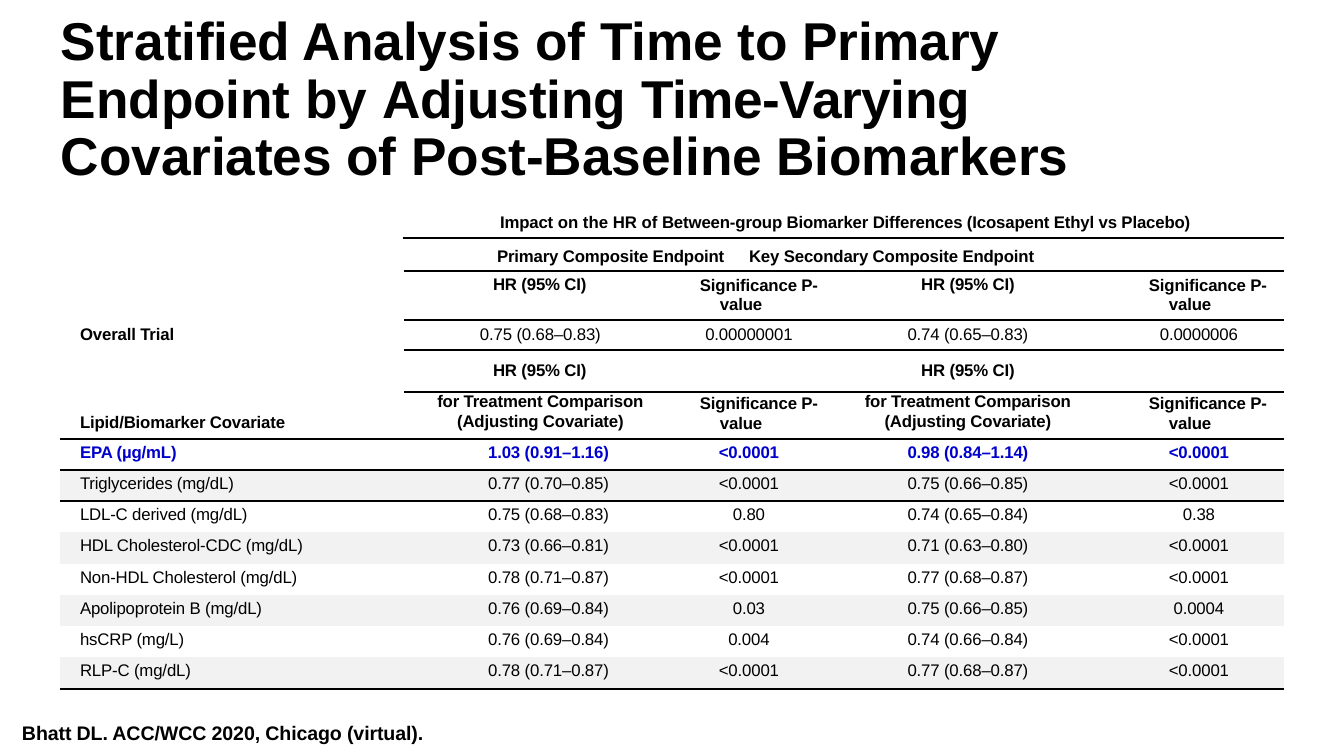
import pptx
import pptx.util
import pptx.dml.color
import pptx.enum.shapes
import pptx.enum.text
import pptx.oxml.ns
from lxml import etree

PX = 914400 / 100.8
Pt = pptx.util.Pt
ALIGN = pptx.enum.text.PP_ALIGN
qn = pptx.oxml.ns.qn
BLACK = pptx.dml.color.RGBColor(0x00, 0x00, 0x00)
BLUE = pptx.dml.color.RGBColor(0x00, 0x00, 0xCC)
GREY = pptx.dml.color.RGBColor(0xF2, 0xF2, 0xF2)


def px(n):
    return pptx.util.Emu(round(n * PX))


def add_run(p, text, size, bold=True, color=BLACK, spacing=-10):
    r = p.add_run()
    r.text = text
    r.font.name = "Arial"
    r.font.size = Pt(size)
    r.font.bold = bold
    r.font.color.rgb = color
    r._r.get_or_add_rPr().set("spc", str(spacing))


prs = pptx.Presentation()
prs.slide_width = px(1344)
prs.slide_height = px(756)
s = prs.slides.add_slide(prs.slide_layouts[6])

# Rule under the overall heading
rule = s.shapes.add_connector(pptx.enum.shapes.MSO_CONNECTOR.STRAIGHT,
                              px(403), px(238), px(1284), px(238))
rule.line.color.rgb = BLACK
rule.line.width = Pt(1)
etree.SubElement(rule._element.spPr, qn("a:effectLst"))

# Table content
SIGNIFICANCE = "Significance P-value"
ADJUSTED = "for Treatment Comparison\n(Adjusting Covariate)"
HR = "HR (95% CI)"
ROWS = [
    ["", HR, SIGNIFICANCE, HR, SIGNIFICANCE],
    ["Overall Trial", "0.75 (0.68–0.83)", "0.00000001", "0.74 (0.65–0.83)", "0.0000006"],
    ["", HR, "", HR, ""],
    ["Lipid/Biomarker Covariate", ADJUSTED, SIGNIFICANCE, ADJUSTED, SIGNIFICANCE],
    ["EPA (µg/mL)", "1.03 (0.91–1.16)", "<0.0001", "0.98 (0.84–1.14)", "<0.0001"],
    ["Triglycerides (mg/dL)", "0.77 (0.70–0.85)", "<0.0001", "0.75 (0.66–0.85)", "<0.0001"],
    ["LDL-C derived (mg/dL)", "0.75 (0.68–0.83)", "0.80", "0.74 (0.65–0.84)", "0.38"],
    ["HDL Cholesterol-CDC (mg/dL)", "0.73 (0.66–0.81)", "<0.0001", "0.71 (0.63–0.80)", "<0.0001"],
    ["Non-HDL Cholesterol (mg/dL)", "0.78 (0.71–0.87)", "<0.0001", "0.77 (0.68–0.87)", "<0.0001"],
    ["Apolipoprotein B (mg/dL)", "0.76 (0.69–0.84)", "0.03", "0.75 (0.66–0.85)", "0.0004"],
    ["hsCRP (mg/L)", "0.76 (0.69–0.84)", "0.004", "0.74 (0.66–0.84)", "<0.0001"],
    ["RLP-C (mg/dL)", "0.78 (0.71–0.87)", "<0.0001", "0.77 (0.68–0.87)", "<0.0001"],
]
WIDTHS = [344, 269, 158, 280, 173]
HEIGHTS = [49, 30, 33, 47] + [31, 31, 31, 32] * 2
TOP_INSETS = [4, 5, 11, 0] + [5] * 8
EPA_ROW = 4

# Alignment, left margin, first-line indent and right inset, by column
COLUMN_PLACE = [(ALIGN.LEFT, 20, 0, 0), (ALIGN.RIGHT, 0, 0, 64), (ALIGN.CENTER, 0, 0, 6),
                (ALIGN.CENTER, 0, 0, 6), (ALIGN.CENTER, 3, 0, 0)]
CELL_PLACE = {(0, 1): (ALIGN.LEFT, 89, 0, 0), (1, 1): (ALIGN.LEFT, 76, 0, 0),
              (2, 1): (ALIGN.LEFT, 89, 0, 0), (3, 1): (ALIGN.CENTER, 4, 0, 0)}
for row in (0, 3):
    CELL_PLACE[row, 2] = (ALIGN.LEFT, 47, -20, 0)
    CELL_PLACE[row, 4] = (ALIGN.LEFT, 58, -20, 0)

# Ruled row edges, each with the first column it covers
RULED_EDGES = {0: 1, 1: 1, 2: 1, 3: 1, 4: 0, 5: 0, 6: 0, 12: 0}

# Table
table = s.shapes.add_table(len(ROWS), len(WIDTHS), px(60), px(271),
                           px(sum(WIDTHS)), px(sum(HEIGHTS))).table
table.first_row = False
table.horz_banding = False
for column, width in zip(table.columns, WIDTHS):
    column.width = px(width)
for table_row, height in zip(table.rows, HEIGHTS):
    table_row.height = px(height)

for row, texts in enumerate(ROWS):
    for col, text in enumerate(texts):
        cell = table.cell(row, col)
        align, left, indent, right = CELL_PLACE.get((row, col), COLUMN_PLACE[col])
        cell.margin_left = cell.margin_bottom = 0
        cell.margin_right = px(right)
        cell.margin_top = px(21 if (row, col) == (3, 0) else TOP_INSETS[row])

        # Borders, then fill
        tcPr = cell._tc.get_or_add_tcPr()
        for side, edge in (("L", None), ("R", None), ("T", row), ("B", row + 1)):
            ln = etree.SubElement(tcPr, qn(f"a:ln{side}"), w=str(Pt(1.5)))
            if col >= RULED_EDGES.get(edge, len(WIDTHS)):
                fill = etree.SubElement(ln, qn("a:solidFill"))
                etree.SubElement(fill, qn("a:srgbClr"), val=str(BLACK))
            else:
                etree.SubElement(ln, qn("a:noFill"))
        if row > EPA_ROW and row % 2:
            cell.fill.solid()
            cell.fill.fore_color.rgb = GREY
        else:
            cell.fill.background()

        # Text
        if not text:
            continue
        tf = cell.text_frame
        for i, line in enumerate(text.split("\n")):
            p = tf.add_paragraph() if i else tf.paragraphs[0]
            p.alignment = align
            pPr = p._p.get_or_add_pPr()
            pPr.set("marL", str(px(left)))
            pPr.set("indent", str(px(indent)))
            if text == SIGNIFICANCE:
                p.line_spacing = 1.05 if row == 0 else Pt(14.9)
            elif text == ADJUSTED and i == 0:
                p.line_spacing = Pt(14.1)
            if i:
                p.space_before = Pt(0.5)
            bold = row in (0, 2, 3, EPA_ROW) or (row, col) == (1, 0)
            add_run(p, line, 12, bold, BLUE if row == EPA_ROW else BLACK)

# Text boxes: source line, then title with the table's column headings
boxes = []
for left, top, width, height, inset in ((22, 722, 408, 25, 0), (60, 7, 1144, 260, 8)):
    tf = s.shapes.add_textbox(px(left), px(top), px(width), px(height)).text_frame
    tf.word_wrap = True
    tf.margin_left = tf.margin_right = tf.margin_bottom = 0
    tf.margin_top = px(inset)
    boxes.append(tf)
source, title = boxes

p = source.paragraphs[0]
p.line_spacing = Pt(16.4)
add_run(p, "Bhatt DL. ACC/WCC 2020, Chicago (virtual).", 14)

p = title.paragraphs[0]
p.line_spacing = 0.9
p._p.get_or_add_pPr().set("marL", str(px(1)))
for text, spacing in (("Stratified Analysis ", -10), ("of ", 0), ("Time ", -20),
                      ("to Primary Endpoint ", -10), ("by ", 0), ("Adjusting ", -10),
                      ("Time-Varying ", -30), ("Covariates ", -10), ("of ", 0),
                      ("Post-Baseline Biomarkers", -10)):
    add_run(p, text, 38, spacing=spacing)

p = title.add_paragraph()
pPr = p._p.get_or_add_pPr()
pPr.set("marL", str(px(437)))
pPr.set("indent", str(px(3)))
tabs = etree.SubElement(pPr, qn("a:tabLst"))
etree.SubElement(tabs, qn("a:tab"), pos=str(px(849)), algn="l")
p.line_spacing = 1.68
p.space_before = Pt(7.5)
for text, spacing in (("Impact ", -10), ("on the ", 0), ("HR ", -10), ("of ", 0),
                      ("Between-group Biomarker Differences (Icosapent Ethyl vs Placebo) "
                       "Primary Composite Endpoint\tKey Secondary Composite Endpoint", -10)):
    add_run(p, text, 12, spacing=spacing)

prs.save("out.pptx")
